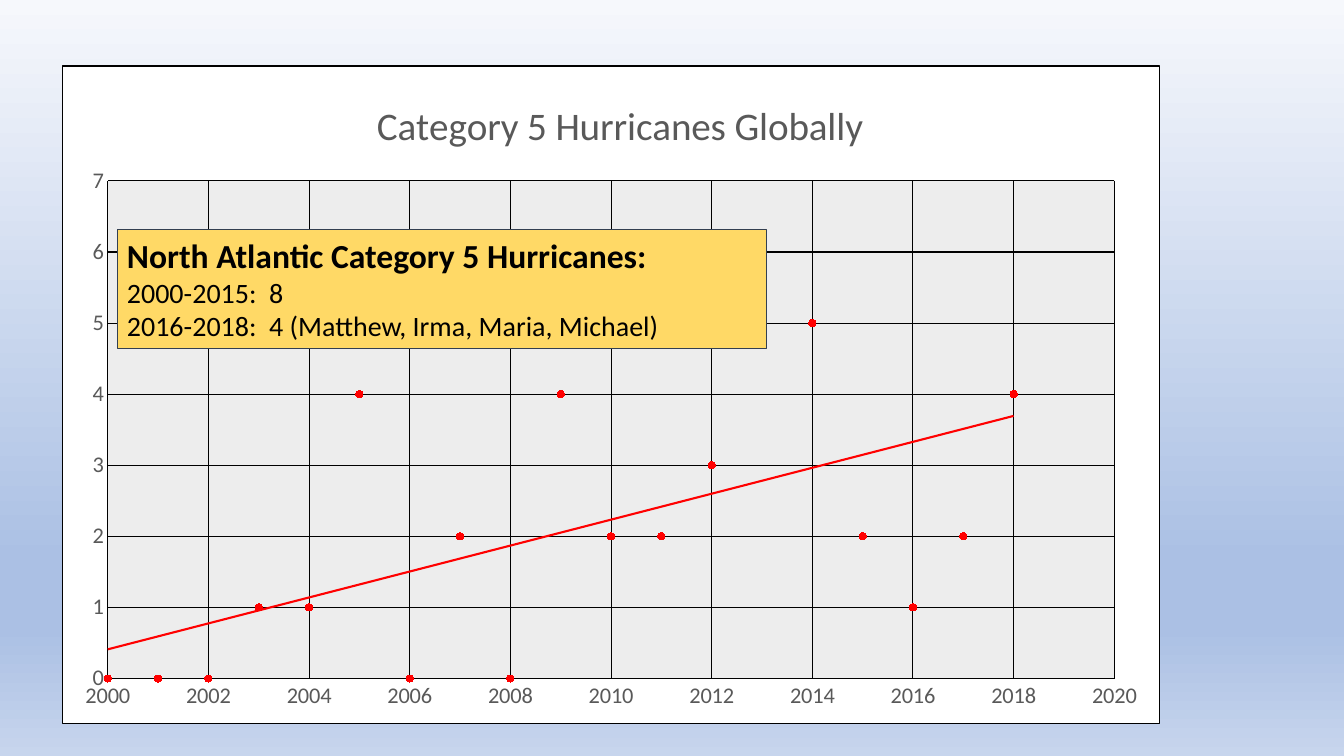
import pptx
import pptx.chart.data
import pptx.dml.color
import pptx.enum.chart
import pptx.enum.shapes
import pptx.enum.text
import pptx.oxml
import pptx.oxml.ns
import pptx.util
from dataclasses import dataclass
from typing import Any

Cm = pptx.util.Cm
Pt = pptx.util.Pt
qn = pptx.oxml.ns.qn
FONT = "Calibri"
BLACK, GRAY, RED = "000000", "595959", "FF0000"
COUNTS = [0, 0, 0, 1, 1, 4, 0, 2, 0, 4, 2, 2, 3, 6, 5, 2, 1, 2, 4]


@dataclass
class Stop:
    pos: int
    hue: str


@dataclass
class Scale:
    axis: Any
    low: int
    high: int
    step: int
    width: float


@dataclass
class Line:
    text: str
    size: int
    bold: bool = False


STOPS = [Stop(0, "F6F8FC"), Stop(74, "ABC0E4"), Stop(83, "ABC0E4"), Stop(100, "C7D5ED")]
LINES = [
    Line("North Atlantic Category 5 Hurricanes:", 24, True),
    Line("2000-2015:  8", 20),
    Line("2016-2018:  4 (Matthew, Irma, Maria, Michael)", 20),
]


def color(hue: str) -> pptx.dml.color.RGBColor:
    return pptx.dml.color.RGBColor.from_string(hue)


def paint(fill: Any, hue: str) -> None:
    fill.solid()
    fill.fore_color.rgb = color(hue)


def stroke(line: Any, hue: str, width: float) -> None:
    paint(line.fill, hue)
    line.width = Pt(width)


def style(font: Any, size: float, hue: str, bold: bool = False) -> None:
    font.name, font.size, font.bold = FONT, Pt(size), bold
    font.color.rgb = color(hue)


def write(para: Any, text: str, *, size: float, hue: str = BLACK, bold: bool = False) -> None:
    run = para.add_run()
    run.text = text
    style(run.font, size, hue, bold)


def node(tag: str, body: str) -> Any:
    spaces = pptx.oxml.ns.nsdecls("c", "a")
    return pptx.oxml.parse_xml(f"<{tag} {spaces}>{body}</{tag}>")


def solid(hue: str) -> str:
    return f'<a:solidFill><a:srgbClr val="{hue}"/></a:solidFill>'


def edge(hue: str, width: float) -> str:
    return f'<a:ln w="{Pt(width)}">{solid(hue)}</a:ln>'


def place(owner: Any, index: int, **parts: float) -> None:
    old = owner.find(qn("c:layout"))
    if old is not None:
        owner.remove(old)
    target = '<c:layoutTarget val="inner"/>' if "w" in parts else ""
    modes = "".join(f'<c:{key}Mode val="edge"/>' for key in "xy")
    sizes = "".join(f'<c:{key} val="{val}"/>' for key, val in parts.items())
    body = f"<c:manualLayout>{target}{modes}{sizes}</c:manualLayout>"
    owner.insert(index, node("c:layout", body))


def set_scale(scale: Scale) -> None:
    axis = scale.axis
    axis.minimum_scale, axis.maximum_scale = scale.low, scale.high
    axis.major_unit = scale.step
    axis.major_tick_mark = axis.minor_tick_mark = pptx.enum.chart.XL_TICK_MARK.NONE
    axis.has_major_gridlines = True
    stroke(axis.major_gridlines.format.line, BLACK, 0.75)
    stroke(axis.format.line, BLACK, scale.width)
    style(axis.tick_labels.font, 16, GRAY)


def add_back(slide: Any) -> None:
    fill = slide.background.fill
    fill.gradient()
    fill.gradient_angle = 270
    stops = next(slide.element.iter(qn("a:gsLst")))
    for old in list(stops):
        stops.remove(old)
    for stop in STOPS:
        item = node("a:gs", f'<a:srgbClr val="{stop.hue}"/>')
        item.set("pos", str(stop.pos * 1000))
        stops.append(item)


def add_plot(slide: Any) -> None:
    data = pptx.chart.data.XyChartData()
    points = data.add_series("Series 1")
    for year, count in enumerate(COUNTS, 2000):
        points.add_data_point(year, count)
    kind = pptx.enum.chart.XL_CHART_TYPE.XY_SCATTER
    chart = slide.shapes.add_chart(
        kind, Cm(1.57), Cm(1.65), Cm(27.66), Cm(16.59), data
    ).chart
    style(chart.font, 10, BLACK)
    chart.has_legend = False
    chart.has_title = True
    title = chart.chart_title
    write(title.text_frame.paragraphs[0], "Category 5 Hurricanes Globally", size=28, hue=GRAY)
    title.include_in_layout = False
    place(title._element, 1, x=0.28, y=0.04)

    set_scale(Scale(chart.category_axis, 2000, 2020, 2, 1.25))
    set_scale(Scale(chart.value_axis, 0, 7, 1, 0.75))

    plot = chart.plots[0]
    plot.vary_by_categories = False
    series = plot.series[0]
    series.smooth = False
    series.format.line.fill.background()
    marker = series.marker
    marker.style = pptx.enum.chart.XL_MARKER_STYLE.CIRCLE
    marker.size = 5
    paint(marker.format.fill, RED)
    stroke(marker.format.line, RED, 0.75)
    trend = node(
        "c:trendline",
        f'<c:spPr>{edge(RED, 1.5)}</c:spPr><c:trendlineType val="linear"/>'
        '<c:dispRSqr val="0"/><c:dispEq val="0"/>',
    )
    series._element.find(qn("c:xVal")).addprevious(trend)

    space = chart._chartSpace
    frame = node("c:spPr", solid("FFFFFF") + edge(BLACK, 0.75))
    space.find(qn("c:txPr")).addprevious(frame)
    area = next(space.iter(qn("c:plotArea")))
    place(area, 0, x=0.041, y=0.175, w=0.918, h=0.757)
    area.append(node("c:spPr", solid("EDEDED")))


def add_note(slide: Any) -> None:
    kind = pptx.enum.shapes.MSO_SHAPE.RECTANGLE
    note = slide.shapes.add_shape(kind, Cm(2.95), Cm(5.79), Cm(16.38), Cm(3))
    note.shadow.inherit = False
    paint(note.fill, "FFD966")
    stroke(note.line, "333F50", 0.75)
    frame = note.text_frame
    frame.word_wrap = True
    frame.auto_size = pptx.enum.text.MSO_AUTO_SIZE.SHAPE_TO_FIT_TEXT
    frame.vertical_anchor = pptx.enum.text.MSO_ANCHOR.TOP
    for index, line in enumerate(LINES):
        para = frame.add_paragraph() if index else frame.paragraphs[0]
        para.alignment = pptx.enum.text.PP_ALIGN.LEFT
        write(para, line.text, size=line.size, bold=line.bold)


def main() -> None:
    deck = pptx.Presentation()
    deck.slide_width, deck.slide_height = Cm(33.87), Cm(19.05)
    slide = deck.slides.add_slide(deck.slide_layouts[6])
    add_back(slide)
    add_plot(slide)
    add_note(slide)
    deck.save("out.pptx")


if __name__ == "__main__":
    main()
